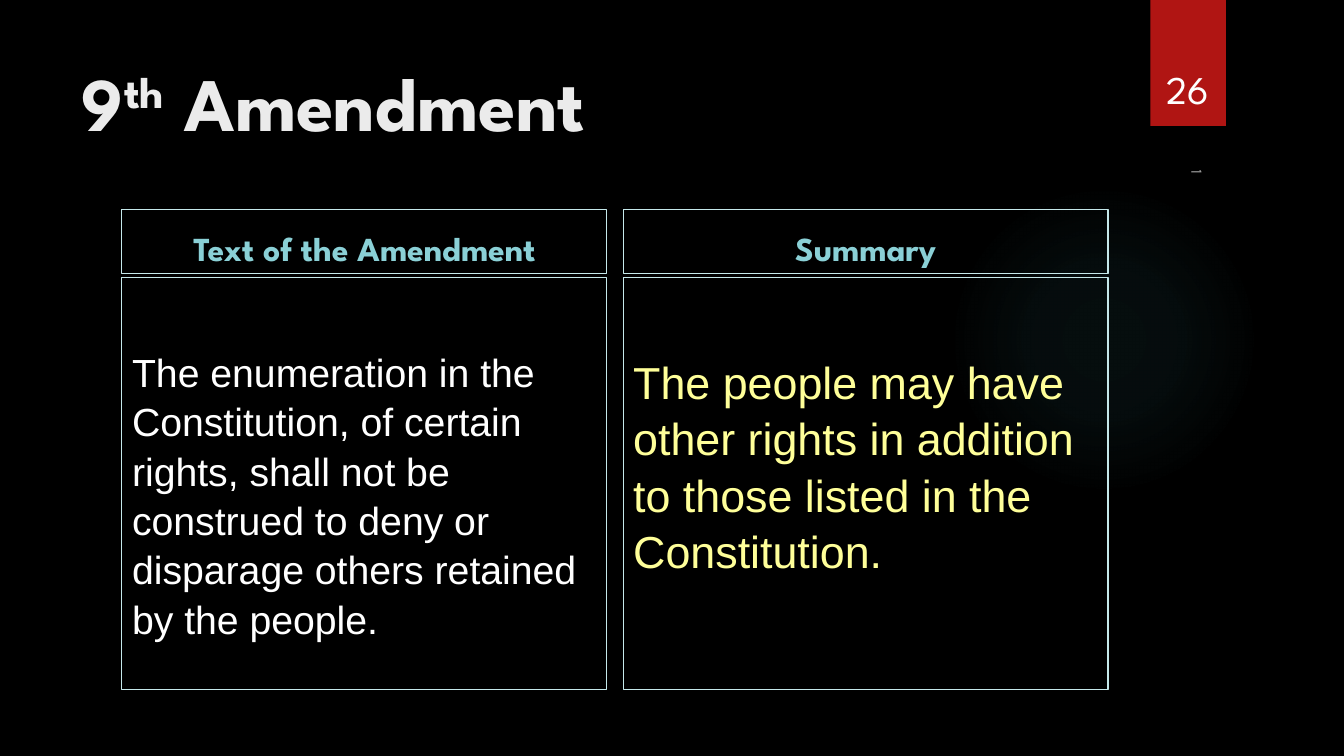
from lxml import etree
from pptx import Presentation
from pptx.dml.color import RGBColor
from pptx.enum import shapes, text
from pptx.oxml import ns, parse_xml
from pptx.util import Inches, Pt

BLACK = RGBColor(0x00, 0x00, 0x00)
WHITE = RGBColor(0xFF, 0xFF, 0xFF)
OFF_WHITE = RGBColor(0xEB, 0xEB, 0xEB)
RED = RGBColor(0xB0, 0x15, 0x13)
TEAL = RGBColor(0x50, 0xB9, 0xC1)
AQUA = RGBColor(0x8A, 0xD0, 0xD6)
PALE_AQUA = RGBColor(0xC5, 0xE8, 0xEA)
YELLOW = RGBColor(0xFF, 0xFF, 0x99)

DISPLAY, READING = "League Spartan", "Arial"
TOP, BOTTOM = text.MSO_ANCHOR.TOP, text.MSO_ANCHOR.BOTTOM
LEFT, CENTER = text.PP_ALIGN.LEFT, text.PP_ALIGN.CENTER


class AmendmentSlide:
    """Holds the text styles and the slide being built."""

    STYLES = {
        "title": dict(name=DISPLAY, size=Pt(54), bold=True, color=OFF_WHITE),
        "header": dict(name=DISPLAY, size=Pt(24), bold=True, color=AQUA),
        "amendment": dict(name=READING, size=Pt(28), bold=False, color=WHITE),
        "summary": dict(name=READING, size=Pt(32), bold=False, color=YELLOW),
        "number": dict(name=DISPLAY, size=Pt(28), color=WHITE),
        "side": dict(name=DISPLAY, size=Pt(11), color=WHITE),
    }

    def __init__(self, deck):
        self.slide = deck.slides.add_slide(deck.slide_layouts[4])
        self.slide.background.fill.solid()
        self.slide.background.fill.fore_color.rgb = BLACK

    def place(self, shape, box):
        for side, length in zip(("left", "top", "width", "height"), box):
            setattr(shape, side, Inches(length))

    def backdrop(self, kind, box, color):
        """Add a plain shape behind the placeholders."""
        shape = self.slide.shapes.add_shape(kind, *map(Inches, box))
        shape.shadow.inherit = False
        shape.fill.solid()
        shape.fill.fore_color.rgb = color
        shape.line.fill.background()
        self.slide.shapes._spTree.insert(2, shape._element)
        return shape

    def glow(self, box, color, stops):
        shape = self.backdrop(shapes.MSO_SHAPE.OVAL, box, color)
        marks = "".join(
            f'<a:gs pos="{pos * 1000}"><a:srgbClr val="{color}">'
            f'<a:alpha val="{alpha * 1000}"/></a:srgbClr></a:gs>'
            for pos, alpha in stops)
        gradient = parse_xml(
            f'<a:gradFill {ns.nsdecls("a")}><a:gsLst>{marks}</a:gsLst>'
            '<a:path path="circle"><a:fillToRect l="50000" t="50000" '
            'r="50000" b="50000"/></a:path></a:gradFill>')
        properties = shape._element.spPr
        properties.replace(properties.find(ns.qn("a:solidFill")), gradient)

    def drop_shadow(self, shape):
        effects = shape._element.spPr.find(ns.qn("a:effectLst"))
        effects.append(parse_xml(
            f'<a:outerShdw {ns.nsdecls("a")} blurRad="{Pt(3)}" dist="{Pt(2)}" '
            'dir="5400000"><a:srgbClr val="000000"><a:alpha val="45000"/>'
            '</a:srgbClr></a:outerShdw>'))

    def fill_text(self, shape, runs, style, anchor, align=LEFT, spacing=1.0, inset=0.05):
        frame = shape.text_frame
        layout = dict(word_wrap=True, auto_size=text.MSO_AUTO_SIZE.NONE,
                      vertical_anchor=anchor, margin_top=Inches(inset))
        for name, value in layout.items():
            setattr(frame, name, value)
        paragraph = frame.paragraphs[0]
        properties = paragraph._p.get_or_add_pPr()
        properties.set("marL", "0")
        properties.set("indent", "0")
        etree.SubElement(properties, ns.qn("a:buNone"))
        for name, value in dict(alignment=align, line_spacing=spacing,
                                space_before=Pt(0)).items():
            setattr(paragraph, name, value)
        for wording in runs:
            run = paragraph.add_run()
            run.text = wording
            for name, value in self.STYLES[style].items():
                if name == "color":
                    run.font.color.rgb = value
                else:
                    setattr(run.font, name, value)
        return paragraph

    def placeholder(self, index, box, runs, style, anchor, outline=None, **layout):
        shape = self.slide.placeholders[index]
        self.place(shape, box)
        if outline is not None:
            shape.line.color.rgb = outline
            shape.line.width = Pt(0.75)
        return self.fill_text(shape, runs, style, anchor, **layout)

    def label(self, box, wording, style, align=LEFT, rotation=0):
        shape = self.slide.shapes.add_textbox(*map(Inches, box))
        shape.rotation = rotation
        return self.fill_text(shape, [wording], style, BOTTOM, align)


def main():
    deck = Presentation()
    deck.slide_width, deck.slide_height = Inches(13.33), Inches(7.5)
    page = AmendmentSlide(deck)

    # Backdrop
    ribbon = page.backdrop(shapes.MSO_SHAPE.RECTANGLE, (11.41, 0, 0.75, 1.25), RED)
    page.drop_shadow(ribbon)
    page.glow((9.41, 1.83, 3.08, 3.08), TEAL, ((0, 7), (36, 6), (69, 0), (100, 0)))

    # Title with raised ordinal
    title = page.placeholder(0, (0.71, 0.5, 10.29, 1.53),
                             ("9", "th", " Amendment"), "title", TOP)
    title.runs[1]._r.get_or_add_rPr().set("baseline", "30000")

    # Two columns, each a header above its passage
    columns = (
        ("Text of the Amendment",
         "The enumeration in the Constitution, of certain rights, shall not be "
         "construed to deny or disparage others retained by the people.",
         "amendment", 0.68),
        ("Summary",
         "The people may have other rights in addition to those listed in the "
         "Constitution.",
         "summary", 0.74),
    )
    for column, (header, passage, style, inset) in enumerate(columns):
        left = 1.21 + column * 4.97
        page.placeholder(1 + 2 * column, (left, 2.08, 4.81, 0.63), [header],
                         "header", BOTTOM, PALE_AQUA, align=CENTER)
        page.placeholder(2 + 2 * column, (left, 2.75, 4.81, 4.09), [passage],
                         style, TOP, PALE_AQUA, spacing=1.05, inset=inset)

    # Side mark and page number
    side = page.label((9.79, 3.53, 4.22, 0.33), "1", "side", rotation=90)
    tint = side.runs[0]._r.rPr.find(".//" + ns.qn("a:srgbClr"))
    etree.SubElement(tint, ns.qn("a:alpha")).set("val", "60000")
    page.label((11.32, 0.32, 0.92, 0.84), "26", "number", CENTER)

    deck.save("out.pptx")


if __name__ == "__main__":
    main()
